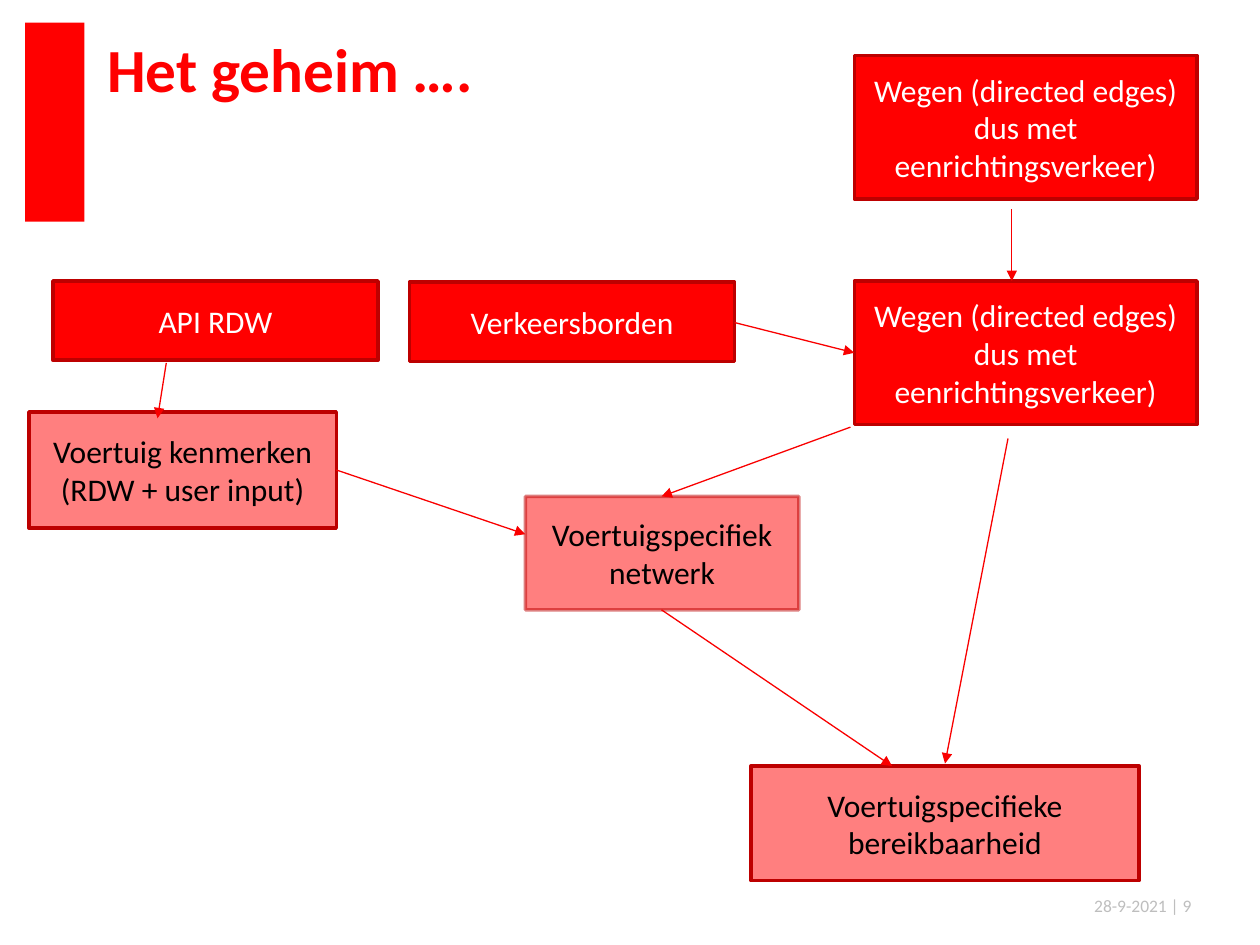
import pptx
import pptx.util
import pptx.dml.color
import pptx.enum.shapes
import pptx.enum.text
import pptx.oxml
import pptx.oxml.ns
from dataclasses import dataclass
from lxml import etree

Inches = pptx.util.Inches
Pt = pptx.util.Pt
Align = pptx.enum.text.PP_ALIGN
Anchor = pptx.enum.text.MSO_ANCHOR
Shape = pptx.enum.shapes.MSO_SHAPE
qn = pptx.oxml.ns.qn


@dataclass(frozen=True)
class Theme:
    font: str = "Calibri"
    red: str = "FF0000"
    edge: str = "BD0000"
    arrow: str = "F90000"
    white: str = "FFFFFF"
    black: str = "000000"
    gray: str = "BEBEBE"
    head: int = 35
    body: int = 18
    foot: int = 10


theme = Theme()


def write(frame, text, size=theme.body, color=theme.black, bold=False,
          align=Align.LEFT, anchor=Anchor.TOP, inset=None):
    frame.word_wrap = True
    frame.vertical_anchor = anchor
    if inset is not None:
        frame.margin_left = frame.margin_right = Inches(inset)
        frame.margin_top = frame.margin_bottom = Inches(inset)
    frame.text = text
    for para in frame.paragraphs:
        para.alignment = align
        font = para.runs[0].font
        font.name = theme.font
        font.size = Pt(size)
        font.bold = bold
        font.color.rgb = pptx.dml.color.RGBColor.from_string(color)


def paint(format, color, alpha=100):
    format.solid()
    format.fore_color.rgb = pptx.dml.color.RGBColor.from_string(color)
    if alpha < 100:
        tone = format._xPr.find(qn("a:solidFill"))[0]
        etree.SubElement(tone, qn("a:alpha"), val=str(alpha * 1000))


deck = pptx.Presentation()
deck.slide_width = Inches(10)
deck.slide_height = Inches(7.5)
slide = deck.slides.add_slide(deck.slide_layouts[6])
shapes = slide.shapes

badge = shapes.add_shape(Shape.RECTANGLE, Inches(0.2), Inches(0.18), Inches(0.47), Inches(1.58))
badge.shadow.inherit = False
paint(badge.fill, theme.red)
badge.line.fill.background()

labels = [
    ("Het geheim ….", 0.85, 0.25, 8.76, 0.67,
     dict(size=theme.head, color=theme.red, bold=True)),
    ("28-9-2021", 8.43, 7.1, 0.83, 0.2,
     dict(size=theme.foot, color=theme.gray, align=Align.RIGHT)),
    ("| 9", 9.29, 7.1, 0.31, 0.2,
     dict(size=theme.foot, color=theme.gray)),
]
for text, left, top, width, height, style in labels:
    label = shapes.add_textbox(Inches(left), Inches(top), Inches(width), Inches(height))
    write(label.text_frame, text, inset=0, **style)

roads = "Wegen (directed edges)\ndus met eenrichtingsverkeer)"
source = dict(color=theme.white, alpha=100, rim=100)
result = dict(color=theme.black, alpha=50, rim=100)
network = dict(result, rim=50)
boxes = [
    ("Verkeersborden", 3.25, 2.24, 2.58, 0.63, source),
    (roads, 6.78, 0.44, 2.72, 1.14, source),
    ("Voertuig kenmerken\n(RDW + user input)", 0.23, 3.27, 2.44, 0.92, result),
    ("Voertuigspecifieke bereikbaarheid", 5.96, 6.08, 3.08, 0.91, result),
    ("Voertuigspecifiek netwerk", 4.17, 3.94, 2.17, 0.9, network),
    (roads, 6.78, 2.23, 2.72, 1.14, source),
    ("API RDW", 0.42, 2.23, 2.58, 0.63, source),
]
for text, left, top, width, height, look in boxes:
    box = shapes.add_shape(Shape.RECTANGLE, Inches(left), Inches(top), Inches(width), Inches(height))
    box.shadow.inherit = False
    paint(box.fill, theme.red, look["alpha"])
    box.line.width = Pt(2)
    paint(box.line.fill, theme.edge, look["rim"])
    write(box.text_frame, text, color=look["color"], align=Align.CENTER, anchor=Anchor.MIDDLE)

arrows = [
    (5.83, 2.56, 6.78, 2.8),
    (2.67, 3.73, 4.17, 4.24),
    (8.03, 1.66, 8.03, 2.23),
    (6.75, 3.39, 5.25, 3.94),
    (5.25, 4.84, 7.08, 6.08),
    (8, 3.48, 7.5, 6.06),
    (1.32, 2.88, 1.25, 3.32),
]
for ends in arrows:
    arrow = shapes.add_connector(pptx.enum.shapes.MSO_CONNECTOR.STRAIGHT, *map(Inches, ends))
    arrow.line.width = Pt(0.75)
    paint(arrow.line.fill, theme.arrow)
    etree.SubElement(arrow.line._get_or_add_ln(), qn("a:tailEnd"), type="triangle")
    etree.SubElement(arrow._element.spPr, qn("a:effectLst"))

deck.save("out.pptx")
